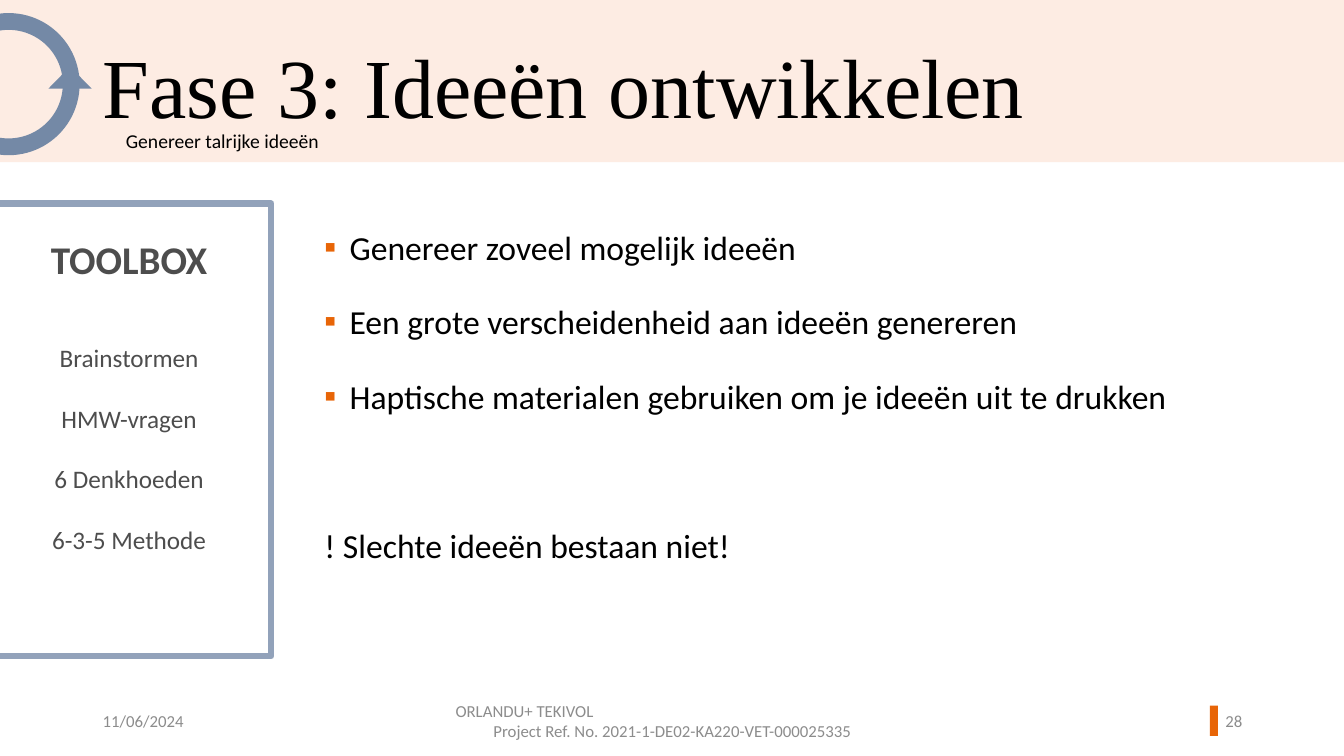
from lxml import etree
from pptx import Presentation
from pptx.dml.color import RGBColor
from pptx.enum.shapes import MSO_SHAPE
from pptx.enum.text import MSO_ANCHOR, MSO_AUTO_SIZE, PP_ALIGN
from pptx.oxml.ns import qn
from pptx.util import Inches, Pt

LEFT, CENTER, RIGHT = PP_ALIGN.LEFT, PP_ALIGN.CENTER, PP_ALIGN.RIGHT
TOP, MIDDLE = MSO_ANCHOR.TOP, MSO_ANCHOR.MIDDLE
RECTANGLE, DONUT = MSO_SHAPE.RECTANGLE, MSO_SHAPE.DONUT
TRIANGLE = MSO_SHAPE.ISOSCELES_TRIANGLE

COLORS = {
    "band": "FDECE3", "accent": "E86507", "cycle": "7489A6",
    "frame": "92A2BA", "white": "FFFFFF", "black": "000000",
    "tools": "4D4D4D", "footer": "8C8C8C",
}
BODY_FONT, TITLE_FONT = "Calibri", "Times New Roman"
SLIDE_W, SLIDE_H = 13.33, 7.5

IDEAS = [
    "Genereer zoveel mogelijk ideeën",
    "Een grote verscheidenheid aan ideeën genereren",
    "Haptische materialen gebruiken om je ideeën uit te drukken",
]
TOOLS = ["Brainstormen", "HMW-vragen", "6 Denkhoeden", "6-3-5 Methode"]


def rgb(name):
    return RGBColor.from_string(COLORS[name])


def add_filled(shapes, preset, box, fill):
    shape = shapes.add_shape(preset, *map(Inches, box))
    shape.shadow.inherit = False
    shape.fill.solid()
    shape.fill.fore_color.rgb = rgb(fill)
    shape.line.fill.background()
    return shape


def add_frame(slide, box, anchor=TOP):
    frame = slide.shapes.add_textbox(*map(Inches, box)).text_frame
    frame.word_wrap = True
    frame.vertical_anchor = anchor
    return frame


def write(frame, text, size, color, align=LEFT, font=BODY_FONT, bold=False,
          before=0, spacing=None):
    """Fill the first paragraph if it is free, otherwise add one."""
    paragraph = frame.paragraphs[0]
    if paragraph.runs:
        paragraph = frame.add_paragraph()
    paragraph.alignment = align
    paragraph.space_before = Pt(before)
    paragraph.line_spacing = spacing
    run = paragraph.add_run()
    run.text = text
    run.font.size = Pt(size)
    run.font.name = font
    run.font.bold = bold
    run.font.color.rgb = rgb(color)
    return paragraph


def add_bullet(paragraph, char, color, indent):
    props = paragraph._p.get_or_add_pPr()
    props.set("marL", str(Inches(indent)))
    props.set("indent", str(Inches(-indent)))
    bullet_color = etree.SubElement(props, qn("a:buClr"))
    etree.SubElement(bullet_color, qn("a:srgbClr")).set("val", COLORS[color])
    etree.SubElement(props, qn("a:buFont")).set("typeface", BODY_FONT)
    etree.SubElement(props, qn("a:buChar")).set("char", char)


def draw_header(slide, box):
    x, y, width, height = box
    add_filled(slide.shapes, RECTANGLE, box, "band")

    # Title, brought in front of the band
    title = slide.shapes.title
    slide.shapes.element.append(title.element)
    title.left, title.top = Inches(x + 0.92), Inches(y + 0.41)
    title.width, title.height = Inches(9.93), Inches(0.85)
    frame = title.text_frame
    frame.auto_size = MSO_AUTO_SIZE.NONE
    frame.vertical_anchor = TOP
    write(frame, "Fase 3: Ideeën ontwikkelen", 60, "black",
          font=TITLE_FONT, spacing=0.9)

    # Cycle symbol
    cycle = slide.shapes.add_group_shape().shapes
    ring = add_filled(cycle, DONUT, (x - 0.62, y + 0.13, 1.41, 1.41), "cycle")
    ring.adjustments[0] = 0.118
    add_filled(cycle, TRIANGLE, (x + 0.48, y + 0.66, 0.43, 0.22), "cycle")

    subtitle = add_frame(slide, (x + 1.15, y + 1.23, 3.88, 0.34))
    write(subtitle, "Genereer talrijke ideeën", 14, "black")


def draw_toolbox(slide, box):
    toolbox = add_filled(slide.shapes, RECTANGLE, box, "white")
    toolbox.line.color.rgb = rgb("frame")
    toolbox.line.width = Pt(4.5)
    frame = toolbox.text_frame
    frame.word_wrap = True
    frame.vertical_anchor = TOP
    frame.margin_top = Inches(0.31)
    write(frame, "TOOLBOX", 28, "tools", CENTER, bold=True)
    for index, tool in enumerate(TOOLS):
        write(frame, tool, 18, "tools", CENTER,
              before=21.6 if index else 43.2)


def draw_ideas(slide, box):
    frame = add_frame(slide, box)
    for idea in IDEAS:
        paragraph = write(frame, idea, 24, "black", before=10, spacing=1.5)
        add_bullet(paragraph, "▪", "accent", 0.25)
    write(frame, "! Slechte ideeën bestaan niet!", 24, "black",
          before=63.2, spacing=1.5)


def draw_footer(slide, box):
    x, y, width, height = box
    add_filled(slide.shapes, RECTANGLE,
               (x + width - 0.42, y + 0.05, 0.08, 0.3), "accent")
    date = add_frame(slide, (x, y, 3, height), MIDDLE)
    write(date, "11/06/2024", 12, "footer")
    project = add_frame(slide, (x + 3.5, y, 4.5, height), MIDDLE)
    write(project, "ORLANDU+ TEKIVOL", 12, "footer")
    write(project, "Project Ref. No. 2021-1-DE02-KA220-VET-000025335", 12,
          "footer", CENTER)
    number = add_frame(slide, (x + width - 0.65, y, 0.65, height), MIDDLE)
    write(number, "28", 12, "footer", RIGHT)


def main():
    prs = Presentation()
    prs.slide_width, prs.slide_height = Inches(SLIDE_W), Inches(SLIDE_H)
    slide = prs.slides.add_slide(prs.slide_layouts[5])  # title only
    draw_header(slide, (0, 0, SLIDE_W, 1.61))
    draw_ideas(slide, (3.12, 2, 9.3, 4.76))
    draw_footer(slide, (0.92, 6.95, 11.5, 0.4))
    draw_toolbox(slide, (-0.13, 2.02, 2.82, 4.49))
    prs.save("out.pptx")


if __name__ == "__main__":
    main()
